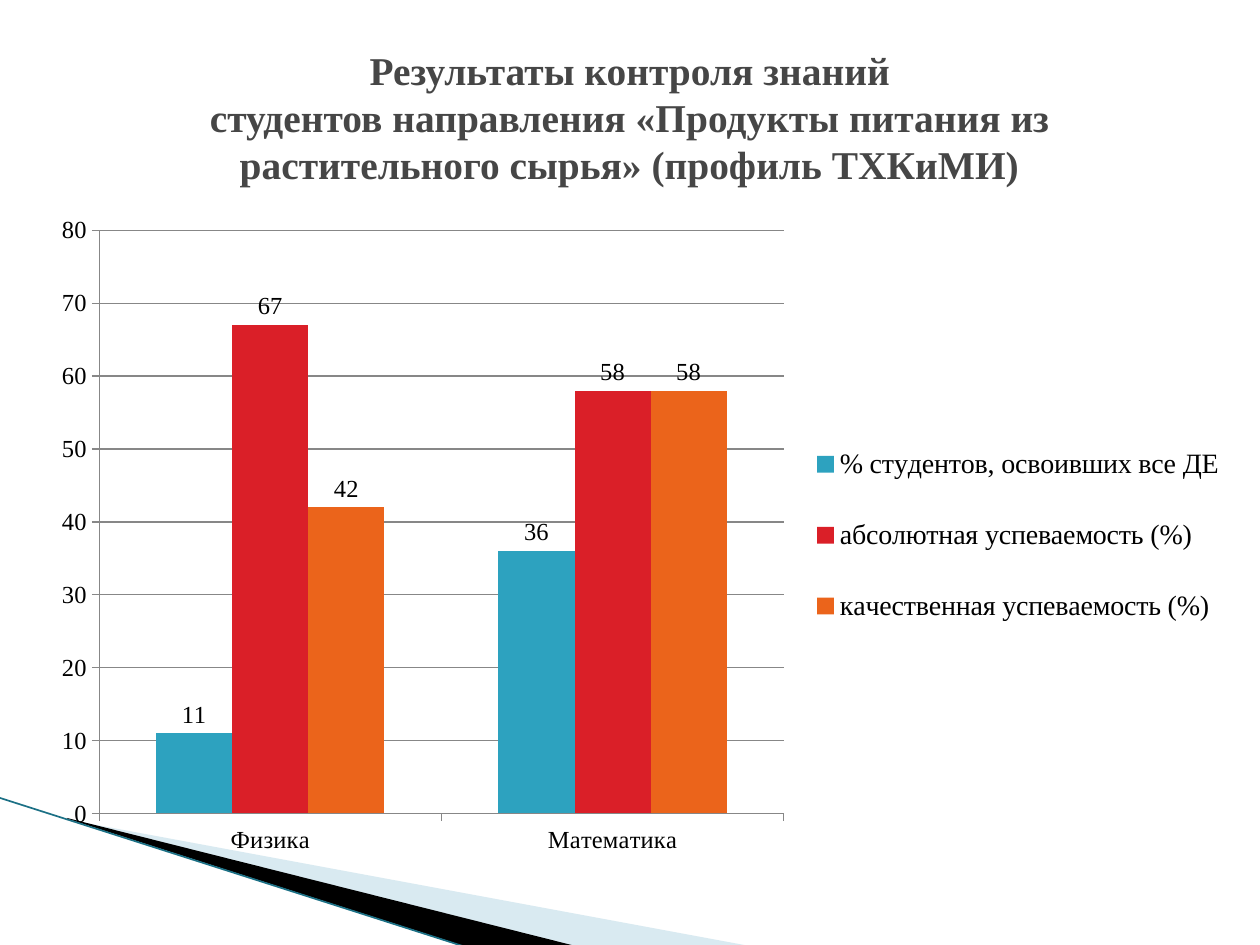
from lxml import etree
from pptx import Presentation
from pptx.chart.data import CategoryChartData
from pptx.dml.color import RGBColor
from pptx.enum.chart import (XL_CHART_TYPE, XL_LABEL_POSITION,
                             XL_LEGEND_POSITION, XL_TICK_MARK)
from pptx.enum.shapes import MSO_CONNECTOR
from pptx.enum.text import MSO_ANCHOR, PP_ALIGN
from pptx.oxml import parse_xml
from pptx.oxml.ns import nsdecls, qn
from pptx.util import Cm, Pt

COLORS = {
    "title": "464646", "text": "000000", "axis": "878787",
    "pale": "A0CBDC", "black": "000000", "edge": "1B7085",
    "mastered": "2DA2BF", "absolute": "DA1F28", "quality": "EB641B",
}


class SlideBuilder:
    font_name = "Times New Roman"

    def __init__(self, slide):
        self.slide = slide

    def color(self, key):
        return RGBColor.from_string(COLORS[key])

    def style_font(self, font, size, key="text", bold=False):
        font.name = self.font_name
        font.size = Pt(size)
        font.bold = bold
        font.color.rgb = self.color(key)

    def wedge(self, points, key, opacity=100):
        points = [(Cm(x), Cm(y)) for x, y in points]
        outline = self.slide.shapes.build_freeform(*points[0])
        outline.add_line_segments(points[1:], close=True)
        wedge = outline.convert_to_shape()
        wedge.shadow.inherit = False
        wedge.fill.solid()
        wedge.fill.fore_color.rgb = self.color(key)
        wedge.line.fill.background()
        if opacity < 100:
            tint = wedge.fill._xPr.find(".//" + qn("a:srgbClr"))
            etree.SubElement(tint, qn("a:alpha"), val=str(opacity * 1000))

    def line(self, start, end, key, width):
        edge = self.slide.shapes.add_connector(
            MSO_CONNECTOR.STRAIGHT, *map(Cm, start + end))
        edge.line.color.rgb = self.color(key)
        edge.line.width = Pt(width)
        etree.SubElement(edge._element.spPr, qn("a:effectLst"))

    def title(self, lines, box, size):
        frame = self.slide.shapes.add_textbox(*map(Cm, box)).text_frame
        frame.word_wrap = True
        frame.vertical_anchor = MSO_ANCHOR.MIDDLE
        heading = frame.paragraphs[0]
        heading.alignment = PP_ALIGN.CENTER
        for index, words in enumerate(lines):
            if index:
                heading.add_line_break()
            run = heading.add_run()
            run.text = words
            self.style_font(run.font, size, "title", bold=True)

    def place(self, part, x, y, w, h, inner=False):
        """Fix the plot area or legend at fractions of the chart."""
        target = '<c:layoutTarget val="inner"/>' if inner else ""
        sizes = "".join(f'<c:{tag} val="{value}"/>' for tag, value in
                        zip("xywh", (x, y, w, h)))
        layout = parse_xml(
            f'<c:layout {nsdecls("c")}><c:manualLayout>{target}'
            '<c:xMode val="edge"/><c:yMode val="edge"/>'
            f'{sizes}</c:manualLayout></c:layout>')
        for old in part.findall(qn("c:layout")):
            part.remove(old)
        before = part.find(qn("c:legendPos"))
        part.insert(0 if before is None else part.index(before) + 1, layout)

    def column_chart(self, categories, series, box):
        results = CategoryChartData()
        results.categories = categories
        for name, values, _ in series:
            results.add_series(name, values)
        chart = self.slide.shapes.add_chart(
            XL_CHART_TYPE.COLUMN_CLUSTERED, *map(Cm, box), results).chart
        chart.has_title = False
        self.style_font(chart.font, 18)

        # Columns and their values
        plot = chart.plots[0]
        plot.gap_width = 150
        plot.overlap = 0
        plot.vary_by_categories = False
        for columns, (_, _, key) in zip(plot.series, series):
            columns.format.fill.solid()
            columns.format.fill.fore_color.rgb = self.color(key)
            labels = columns.data_labels
            labels.show_value = True
            labels.position = XL_LABEL_POSITION.OUTSIDE_END
            self.style_font(labels.font, 14)

        # Axes
        for axis in (chart.category_axis, chart.value_axis):
            axis.major_tick_mark = XL_TICK_MARK.OUTSIDE
            axis.format.line.color.rgb = self.color("axis")
            self.style_font(axis.tick_labels.font, 14)
        scale = chart.value_axis
        scale.minimum_scale, scale.maximum_scale, scale.major_unit = 0, 80, 10
        scale.has_major_gridlines = True
        scale.major_gridlines.format.line.color.rgb = self.color("axis")

        # Legend and layout
        chart.has_legend = True
        chart.legend.position = XL_LEGEND_POSITION.RIGHT
        chart.legend.include_in_layout = False
        self.style_font(chart.legend.font, 16)
        self.place(chart._chartSpace.chart.plotArea,
                   0.05, 0.04, 0.57, 0.88, inner=True)
        self.place(chart.legend._element, 0.64, 0.31, 0.35, 0.38)


def main():
    deck = Presentation()
    deck.slide_width, deck.slide_height = Cm(25.4), Cm(19.05)
    page = SlideBuilder(deck.slides.add_slide(deck.slide_layouts[6]))

    # Corner decoration
    page.wedge([(1.4, 16.53), (15.11, 19.07), (11.58, 19.07), (1.4, 16.51)],
               "pale", opacity=40)
    page.wedge([(1.35, 16.49), (11.6, 19.07), (9.45, 19.1), (1.37, 16.51)],
               "black")
    page.line((-0.02, 16.08), (9.42, 19.1), "edge", 0.95)

    # Test results by subject
    page.column_chart(
        ["Физика", "Математика"],
        [("% студентов, освоивших все ДЕ", (11, 36), "mastered"),
         ("абсолютная успеваемость (%)", (67, 58), "absolute"),
         ("качественная успеваемость (%)", (42, 58), "quality")],
        (0.79, 4.11, 24.21, 13.36))

    # Title
    page.title(["Результаты контроля знаний",
                "студентов направления «Продукты питания из растительного "
                "сырья» (профиль ТХКиМИ)"],
               (1.27, 0.76, 22.86, 3.18), 22.5)

    deck.save("out.pptx")


if __name__ == "__main__":
    main()
